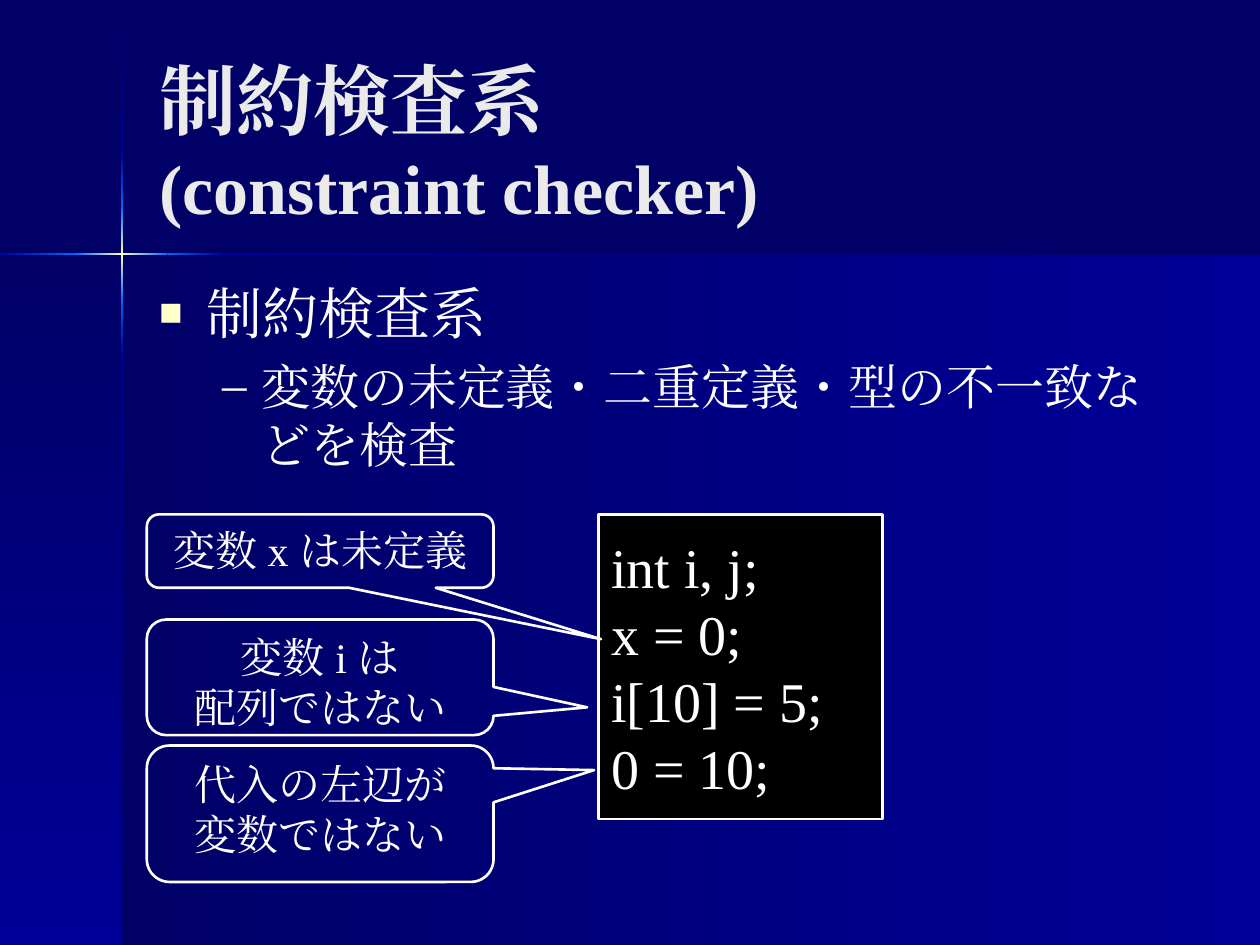
import copy

import pptx
import pptx.dml.color
import pptx.enum.shapes
import pptx.enum.text
import pptx.oxml
import pptx.oxml.ns
import pptx.util
from pptx.util import Cm

COLOURS = {
    "night": "000066",
    "blue": "000099",
    "bright": "0066FF",
    "cream": "FFFFCC",
    "silver": "EAEAEA",
    "white": "FFFFFF",
    "black": "000000",
}
FONT = "Times New Roman"
SHAPES = pptx.enum.shapes.MSO_SHAPE
ALIGN = pptx.enum.text.PP_ALIGN
ANCHOR = pptx.enum.text.MSO_ANCHOR
RIGHTWARD, DOWNWARD = 0, 270


def colour(name):
    return pptx.dml.color.RGBColor.from_string(COLOURS[name])


def set_values(target, values):
    for name, value in values.items():
        setattr(target, name, value)


class SlideWriter:
    """Holds the house style and the slide being filled."""

    def __init__(self, presentation):
        self.slide = presentation.slides.add_slide(presentation.slide_layouts[6])
        background = self.slide.background.fill
        background.solid()
        background.fore_color.rgb = colour("night")

    def gradient_bar(self, left, top, width, height, angle, names):
        """Draw a borderless rectangle with evenly spaced gradient colours."""
        shape = self.slide.shapes.add_shape(
            SHAPES.RECTANGLE, Cm(left), Cm(top), Cm(width), Cm(height))
        shape.shadow.inherit = False
        shape.line.fill.background()
        fill = shape.fill
        fill.gradient()
        stop_list = shape._element.spPr.find(".//" + pptx.oxml.ns.qn("a:gsLst"))
        while len(stop_list) < len(names):
            stop_list.insert(1, copy.deepcopy(stop_list[0]))
        for index, (stop, name) in enumerate(zip(fill.gradient_stops, names)):
            stop.position = index / (len(names) - 1)
            stop.color.rgb = colour(name)
        fill.gradient_angle = angle

    def run(self, paragraph, text, size, name="white", bold=False):
        run = paragraph.add_run()
        run.text = text
        set_values(run.font, {"name": FONT, "size": pptx.util.Pt(size), "bold": bold})
        run.font.color.rgb = colour(name)
        east_asian = pptx.oxml.parse_xml(
            f'<a:ea {pptx.oxml.ns.nsdecls("a")} typeface="{FONT}"/>')
        run.font._element.find(pptx.oxml.ns.qn("a:latin")).addnext(east_asian)

    def text_frame(self, left, top, width, height, anchor):
        box = self.slide.shapes.add_textbox(Cm(left), Cm(top), Cm(width), Cm(height))
        set_values(box.text_frame, {"word_wrap": True, "vertical_anchor": anchor})
        return box.text_frame

    def title(self, left, top, width, height, lines):
        frame = self.text_frame(left, top, width, height, ANCHOR.MIDDLE)
        paragraph = frame.paragraphs[0]
        for index, (text, size) in enumerate(lines):
            if index:
                paragraph.add_line_break()
            self.run(paragraph, text, size, "silver", bold=True)

    def bullets(self, left, top, width, height, items):
        frame = self.text_frame(left, top, width, height, ANCHOR.TOP)
        for index, item in enumerate(items):
            paragraph = frame.add_paragraph() if index else frame.paragraphs[0]
            paragraph.level = index
            paragraph.space_before = pptx.util.Pt(item["size"] * 0.2)
            self.run(paragraph, item["text"], item["size"])
            properties = paragraph._p.get_or_add_pPr()
            properties.set("marL", str(Cm(item["margin"])))
            properties.set("indent", str(-Cm(item["hanging"])))
            for tag in (
                f'<a:buClr {{}}><a:srgbClr val="{COLOURS[item["colour"]]}"/></a:buClr>',
                f'<a:buSzPct {{}} val="{item["percent"] * 1000}"/>',
                f'<a:buFont {{}} typeface="{FONT}"/>',
                f'<a:buChar {{}} char="{item["mark"]}"/>',
            ):
                properties.append(
                    pptx.oxml.parse_xml(tag.format(pptx.oxml.ns.nsdecls("a"))))

    def outlined_shape(self, kind, left, top, width, height, lines, size,
                       align, anchor, wrap=True):
        shape = self.slide.shapes.add_shape(
            kind, Cm(left), Cm(top), Cm(width), Cm(height))
        shape.shadow.inherit = False
        shape.fill.background()
        shape.line.color.rgb = colour("white")
        shape.line.width = pptx.util.Pt(1.5)
        frame = shape.text_frame
        set_values(frame, {"word_wrap": wrap, "vertical_anchor": anchor})
        for index, text in enumerate(lines):
            paragraph = frame.add_paragraph() if index else frame.paragraphs[0]
            paragraph.alignment = align
            self.run(paragraph, text, size)
        return shape

    def code_box(self, left, top, width, height, lines):
        shape = self.outlined_shape(SHAPES.RECTANGLE, left, top, width, height,
                                    lines, 32, ALIGN.LEFT, ANCHOR.MIDDLE, wrap=False)
        shape.fill.solid()
        shape.fill.fore_color.rgb = colour("black")

    def callout(self, left, top, width, height, tip, lines):
        """Draw a rounded callout; tip is its offset from the centre in shape sizes."""
        shape = self.outlined_shape(SHAPES.ROUNDED_RECTANGULAR_CALLOUT, left, top,
                                    width, height, lines, 24, ALIGN.CENTER, ANCHOR.TOP)
        shape.adjustments[0], shape.adjustments[1] = tip


def draw_background(writer):
    writer.gradient_bar(2.46, 5.13, 22.94, 13.92, RIGHTWARD, ["night", "blue"])
    writer.gradient_bar(0, 5.13, 2.46, 13.92, DOWNWARD, ["night", "blue"])
    thickness = 0.05
    vertical_beam = [
        (0.03, 3.07, ["night", "blue"]),
        (3.07, 4.19, ["blue", "bright"]),
        (4.19, 6.05, ["bright", "cream", "bright"]),
        (6.05, 7.16, ["bright", "blue"]),
        (7.16, 19.05, ["blue", "night"]),
    ]
    for start, end, names in vertical_beam:
        writer.gradient_bar(2.44, start, thickness, end - start, DOWNWARD, names)
    horizontal_beam = [
        (0, 1.53, ["blue", "bright"]),
        (1.53, 3.38, ["bright", "cream", "bright"]),
        (3.38, 4.5, ["bright", "blue"]),
        (4.5, 25.4, ["blue", "night"]),
    ]
    for start, end, names in horizontal_beam:
        writer.gradient_bar(start, 5.1, end - start, thickness, RIGHTWARD, names)


def main():
    presentation = pptx.Presentation()
    set_values(presentation, {"slide_width": Cm(25.4), "slide_height": Cm(19.05)})
    writer = SlideWriter(presentation)
    draw_background(writer)

    left = 2.96
    writer.title(left, 0.84, 20.96, 3.99,
                 [("制約検査系", 44), ("(constraint checker)", 40)])
    writer.bullets(left, 5.5, 20.96, 11.43, [
        {"text": "制約検査系", "size": 32, "margin": 0.95, "hanging": 0.95,
         "mark": "■", "colour": "cream", "percent": 70},
        {"text": "変数の未定義・二重定義・型の不一致などを検査", "size": 28,
         "margin": 2.06, "hanging": 0.79,
         "mark": "–", "colour": "white", "percent": 100},
    ])
    writer.code_box(12.07, 10.37, 5.72, 6.14,
                    ["int i, j;", "x = 0;", "i[10] = 5;", "0 = 10;"])
    callouts = [
        (10.37, 1.48, (0.81, 1.2), ["変数 x は未定義"]),
        (12.49, 2.33, (0.77, 0.26), ["変数 i は", "配列ではない"]),
        (15.03, 2.75, (0.79, -0.32), ["代入の左辺が", "変数ではない"]),
    ]
    for top, height, tip, lines in callouts:
        writer.callout(left, top, 6.99, height, tip, lines)

    presentation.save("out.pptx")


if __name__ == "__main__":
    main()
